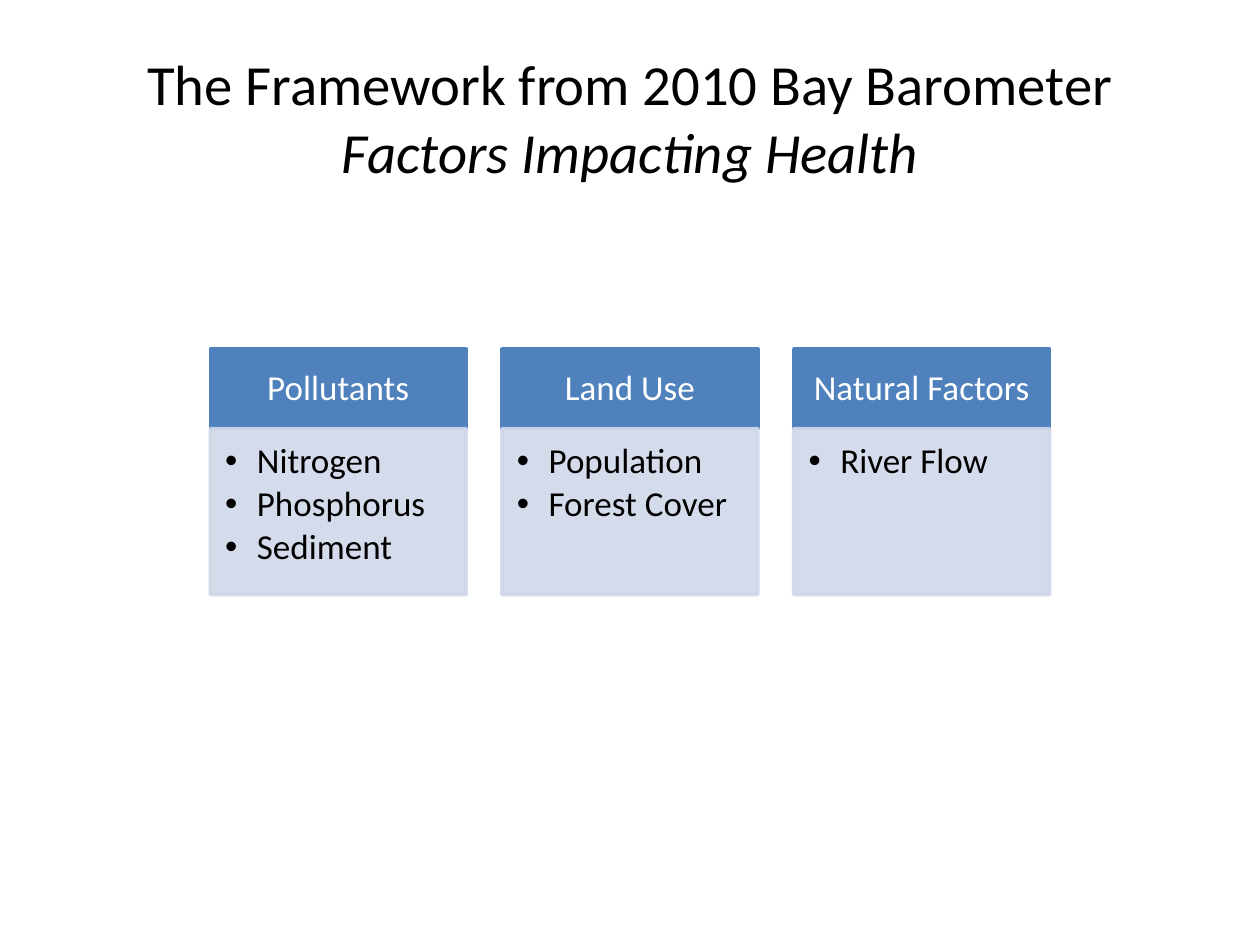
import pptx
import pptx.dml.color
import pptx.enum.shapes
import pptx.enum.text
import pptx.oxml.ns
import pptx.util
from dataclasses import dataclass
from lxml import etree
from pptx.util import Cm, Pt

ALIGN = pptx.enum.text.PP_ALIGN
ANCHOR = pptx.enum.text.MSO_ANCHOR


@dataclass(frozen=True)
class Theme:
    font: str = "Calibri"
    ink: str = "000000"
    white: str = "FFFFFF"
    header: str = "4F81BD"
    panel: str = "D0D8E8"
    panel_alpha: int = 90
    title_size: float = 32.4
    card_size: float = 20


THEME = Theme()

FACTORS = {
    "Pollutants": ["Nitrogen", "Phosphorus", "Sediment"],
    "Land Use": ["Population", "Forest Cover"],
    "Natural Factors": ["River Flow"],
}

# Card grid, in centimetres
LEFT, TOP, WIDTH, PITCH = 4.24, 7.04, 5.16, 5.88
HEADER_HEIGHT, LIST_HEIGHT = 1.6, 3.35


def rgb(value):
    return pptx.dml.color.RGBColor.from_string(value)


def apply(target, formats):
    for name, value in formats.items():
        setattr(target, name, value)


def add_span(para, text, size, color, italic=None):
    span = para.add_run()
    span.text = text
    apply(span.font, {"name": THEME.font, "size": Pt(size), "italic": italic})
    span.font.color.rgb = rgb(color)


def add_title(page, first, second):
    title = page.shapes.title
    apply(title, {"left": Cm(1.27), "top": Cm(0.76),
                  "width": Cm(22.86), "height": Cm(3.18)})
    apply(title.text_frame, {"word_wrap": True, "vertical_anchor": ANCHOR.MIDDLE,
                             "auto_size": pptx.enum.text.MSO_AUTO_SIZE.NONE})
    para = title.text_frame.paragraphs[0]
    para.alignment = ALIGN.CENTER
    add_span(para, first, THEME.title_size, THEME.ink)
    para.add_line_break()
    add_span(para, second, THEME.title_size, THEME.ink, italic=True)


def add_box(page, left, top, height, color, frame_format):
    box = page.shapes.add_shape(pptx.enum.shapes.MSO_SHAPE.RECTANGLE,
                                Cm(left), Cm(top), Cm(WIDTH), Cm(height))
    box.shadow.inherit = False
    box.fill.solid()
    box.fill.fore_color.rgb = rgb(color)
    box.line.color.rgb = rgb(color)
    box.line.width = Pt(2)
    apply(box.text_frame, {"word_wrap": True, **frame_format})
    return box


def set_alpha(box, percent):
    tag = pptx.oxml.ns.qn("a:srgbClr")
    for color in box._element.spPr.iter(tag):
        alpha = etree.SubElement(color, pptx.oxml.ns.qn("a:alpha"))
        alpha.set("val", str(percent * 1000))


def set_bullet(para, indent):
    properties = para._p.get_or_add_pPr()
    properties.set("marL", str(indent))
    properties.set("indent", str(-indent))
    etree.SubElement(properties, pptx.oxml.ns.qn("a:buFont")).set("typeface", "Arial")
    etree.SubElement(properties, pptx.oxml.ns.qn("a:buChar")).set("char", "•")


def add_header(page, left, text):
    box = add_box(page, left, TOP, HEADER_HEIGHT, THEME.header, {
        "vertical_anchor": ANCHOR.MIDDLE,
        "margin_left": Cm(0.4), "margin_right": Cm(0.4),
        "margin_top": Cm(0.23), "margin_bottom": Cm(0.23)})
    para = box.text_frame.paragraphs[0]
    apply(para, {"alignment": ALIGN.CENTER, "line_spacing": 0.9})
    add_span(para, text, THEME.card_size, THEME.white)


def add_list(page, left, items):
    box = add_box(page, left, TOP + HEADER_HEIGHT, LIST_HEIGHT, THEME.panel, {
        "vertical_anchor": ANCHOR.TOP,
        "margin_left": Cm(0.3), "margin_right": Cm(0.4),
        "margin_top": Cm(0.3), "margin_bottom": Cm(0.43)})
    set_alpha(box, THEME.panel_alpha)
    frame = box.text_frame
    for index, item in enumerate(items):
        para = frame.add_paragraph() if index else frame.paragraphs[0]
        apply(para, {"alignment": ALIGN.LEFT, "level": 1,
                     "line_spacing": 0.9, "space_after": Pt(3)})
        set_bullet(para, Cm(0.64))
        add_span(para, item, THEME.card_size, THEME.ink)


def main():
    deck = pptx.Presentation()
    apply(deck, {"slide_width": Cm(25.4), "slide_height": Cm(19.05)})
    page = deck.slides.add_slide(deck.slide_layouts[5])

    # Heading
    add_title(page, "The Framework from 2010 Bay Barometer",
              "Factors Impacting Health")

    # One card for each group of factors
    for column, (name, items) in enumerate(FACTORS.items()):
        left = LEFT + column * PITCH
        add_header(page, left, name)
        add_list(page, left, items)

    deck.save("out.pptx")


if __name__ == "__main__":
    main()
